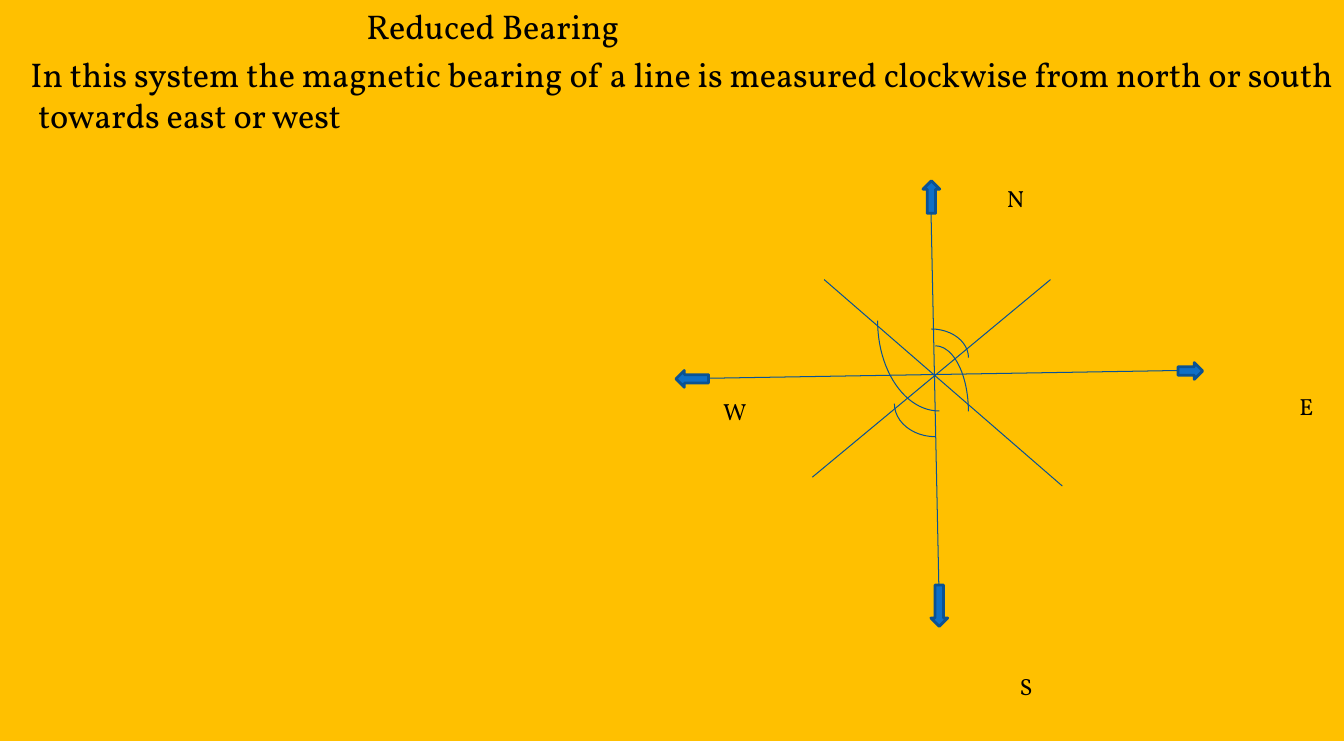
from pptx import Presentation
from pptx.dml.color import RGBColor
from pptx.enum.shapes import MSO_CONNECTOR, MSO_SHAPE
from pptx.enum.text import MSO_ANCHOR, PP_ALIGN
from pptx.oxml.ns import qn
from pptx.util import Inches, Pt

RECTANGLE, ARC = MSO_SHAPE.RECTANGLE, MSO_SHAPE.ARC
UP, DOWN = MSO_SHAPE.UP_ARROW, MSO_SHAPE.DOWN_ARROW
LEFT, RIGHT = MSO_SHAPE.LEFT_ARROW, MSO_SHAPE.RIGHT_ARROW
STRAIGHT = MSO_CONNECTOR.STRAIGHT
TOP, ALIGN_LEFT = MSO_ANCHOR.TOP, PP_ALIGN.LEFT


def color(value):
    return RGBColor.from_string(value)


class BearingSlide:
    font = "Vollkorn"
    ink = "000000"
    panel_fill = "FFC000"
    arrow_fill = "0F6FC6"
    arrow_line = "0B5292"
    thin_line = "095295"

    def __init__(self, page):
        self.page = page

    def shape(self, kind, left, top, width, height):
        shape = self.page.shapes.add_shape(
            kind, Inches(left), Inches(top), Inches(width), Inches(height))
        shape.shadow.inherit = False
        return shape

    def style_line(self, shape, value, width):
        shape.line.color.rgb = color(value)
        shape.line.width = Pt(width)

    def set_text(self, para, text, size):
        para.text = text
        para.alignment = ALIGN_LEFT
        para.font.name = self.font
        para.font.size = Pt(size)
        para.font.color.rgb = color(self.ink)

    def panel(self, width, height, paragraphs):
        panel = self.shape(RECTANGLE, 0, 0, width, height)
        panel.fill.solid()
        panel.fill.fore_color.rgb = color(self.panel_fill)
        panel.line.fill.background()
        frame = panel.text_frame
        frame.word_wrap = True
        frame.vertical_anchor = TOP
        for index, (text, margin, indent, before) in enumerate(paragraphs):
            para = frame.add_paragraph() if index else frame.paragraphs[0]
            self.set_text(para, text, 25)
            para.space_before = Pt(before)
            properties = para._p.get_or_add_pPr()
            properties.set("marL", str(Inches(margin)))
            properties.set("indent", str(Inches(indent)))

    def line(self, x1, y1, x2, y2):
        line = self.page.shapes.add_connector(
            STRAIGHT, Inches(x1), Inches(y1), Inches(x2), Inches(y2))
        self.style_line(line, self.thin_line, 0.75)
        properties = line._element.spPr
        properties.append(properties.makeelement(qn("a:effectLst"), {}))

    def arrow(self, kind, left, top, width, height):
        arrow = self.shape(kind, left, top, width, height)
        arrow.fill.solid()
        arrow.fill.fore_color.rgb = color(self.arrow_fill)
        self.style_line(arrow, self.arrow_line, 2)

    def arc(self, left, top, width, height, rotation):
        arc = self.shape(ARC, left, top, width, height)
        arc.fill.background()
        arc.rotation = rotation
        self.style_line(arc, self.thin_line, 0.75)

    def label(self, text, left, top):
        box = self.page.shapes.add_textbox(
            Inches(left), Inches(top), Inches(0.5), Inches(0.39))
        box.text_frame.word_wrap = True
        self.set_text(box.text_frame.paragraphs[0], text, 17)


def main():
    deck = Presentation()
    deck.slide_width, deck.slide_height = Inches(13.6), Inches(7.5)
    slide = BearingSlide(deck.slides.add_slide(deck.slide_layouts[6]))

    # Panel with heading and definition: text, margin, indent, space before
    slide.panel(13.6, 7.5, [
        ("Reduced Bearing", 3.61, 0, 0),
        ("In this system the magnetic bearing of a line is measured "
         "clockwise from north or south towards east or west",
         0.29, -0.08, 5),
    ])

    # Compass axes and the two bearing lines
    for ends in [(9.42, 2.08, 9.5, 5.92), (7.09, 3.83, 11.92, 3.75),
                 (8.34, 2.83, 10.75, 4.92), (8.22, 4.83, 10.63, 2.83)]:
        slide.line(*ends)

    # Arrowheads at the ends of the axes
    for arrow in [(UP, 9.34, 1.83, 0.17, 0.33), (DOWN, 9.42, 5.92, 0.17, 0.42),
                  (LEFT, 6.84, 3.75, 0.33, 0.17), (RIGHT, 11.92, 3.67, 0.25, 0.17)]:
        slide.arrow(*arrow)

    # Angle arcs: measured from north, then from south
    for arc in [(9.05, 3.33, 0.75, 0.58, 0), (9.13, 3.5, 0.67, 1.33, 0),
                (9.05, 3.75, 0.83, 0.67, 180), (8.88, 2.33, 1.25, 1.83, 180)]:
        slide.arc(*arc)

    # Compass letters
    for label in [("N", 10.09, 1.81), ("E", 13.05, 3.92),
                  ("S", 10.22, 6.75), ("W", 7.22, 3.97)]:
        slide.label(*label)

    deck.save("out.pptx")


if __name__ == "__main__":
    main()
